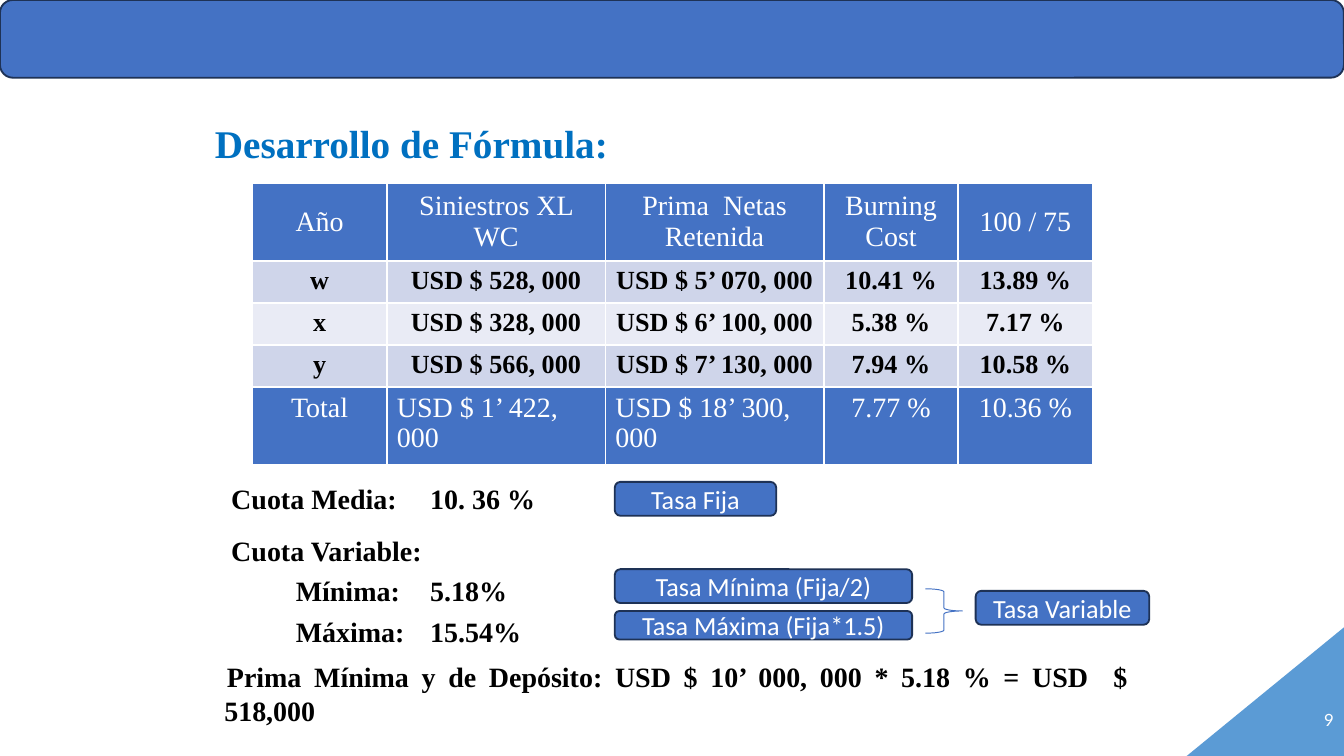
"""Build the slide that develops the reinsurance rate formula."""
from dataclasses import dataclass

from lxml import etree
from pptx import Presentation
from pptx import util as u
from pptx.dml.color import RGBColor
from pptx.enum import shapes, text
from pptx.oxml import ns


@dataclass(frozen=True)
class Theme:
    blue: str = "4472C4"
    outline: str = "1E3256"
    corner: str = "5B9BD5"
    heading: str = "0070C0"
    band_dark: str = "CFD5EA"
    band_light: str = "E9EBF5"
    white: str = "FFFFFF"
    black: str = "000000"
    serif: str = "Times New Roman"
    sans: str = "Calibri"
    number: str = "Lato"
    heading_size: float = 21
    text_size: float = 15
    small_size: float = 14
    number_size: float = 9


theme = Theme()


def write(frame, lines, face, size, color, bold=False, align=text.PP_ALIGN.CENTER,
          anchor=text.MSO_ANCHOR.MIDDLE, inset=(0.19, 0.1)):
    """Fill a text frame or table cell with evenly formatted paragraphs."""
    frame.word_wrap = True
    frame.vertical_anchor = anchor
    frame.margin_left = frame.margin_right = u.Cm(inset[0])
    frame.margin_top = frame.margin_bottom = u.Cm(inset[1])
    body = getattr(frame, "text_frame", frame)
    body.text = "\n".join(lines)
    for paragraph in body.paragraphs:
        paragraph.alignment = align
        paragraph.line_spacing = 1.0
        paragraph.space_before = u.Pt(0)
        font = paragraph.font
        font.name, font.size, font.bold = face, u.Pt(size), bold
        font.color.rgb = RGBColor.from_string(color)


def draw(kind, box, fill=None, line=None, width=1):
    """Add a flat preset shape at a box given in centimetres."""
    shape = slide.shapes.add_shape(kind, *map(u.Cm, box))
    shape.shadow.inherit = False
    for part, color in ((shape.fill, fill), (shape.line.fill, line)):
        if color:
            part.solid()
            part.fore_color.rgb = RGBColor.from_string(color)
        else:
            part.background()
    if line:
        shape.line.width = u.Pt(width)
    return shape


presentation = Presentation()
presentation.slide_width, presentation.slide_height = u.Cm(25.4), u.Cm(14.29)
slide = presentation.slides.add_slide(presentation.slide_layouts[1])
heading, rates = slide.placeholders

corner = draw(shapes.MSO_SHAPE.RIGHT_TRIANGLE, (22.43, 11.86, 2.97, 2.43), theme.corner)
corner._element.spPr.xfrm.set("flipH", "1")
page = slide.shapes.add_textbox(u.Cm(19.69), u.Cm(13.23), u.Cm(5.71), u.Cm(0.76))
write(page.text_frame, ["9"], theme.number, theme.number_size, theme.white,
      align=text.PP_ALIGN.RIGHT)
draw(shapes.MSO_SHAPE.ROUNDED_RECTANGLE, (0, 0, 25.4, 1.47), theme.blue, theme.outline)

heading.left, heading.top, heading.width, heading.height = map(u.Cm, (3.81, 2.2, 17.15, 1.01))
write(heading.text_frame, ["Desarrollo de Fórmula:"], theme.serif, theme.heading_size,
      theme.heading, True, text.PP_ALIGN.LEFT, inset=(0.25, 0))
heading.text_frame.auto_size = text.MSO_AUTO_SIZE.NONE

rows = [
    ["Año", "Siniestros XL WC", "Prima  Netas\nRetenida", "Burning Cost", "100 / 75"],
    ["w", "USD $ 528, 000", "USD $ 5’ 070, 000", "10.41 %", "13.89 %"],
    ["x", "USD $ 328, 000", "USD $ 6’ 100, 000", "5.38 %", "7.17 %"],
    ["y", "USD $ 566, 000", "USD $ 7’ 130, 000", "7.94 %", "10.58 %"],
    ["Total", "USD $ 1’ 422, 000", "USD $ 18’ 300, 000", "7.77 %", "10.36 %"],
]
heights = [1.45, 0.77, 0.77, 0.77, 1.45]
widths = [2.54, 4.13, 4.13, 2.54, 2.54]
fills = [theme.blue, theme.band_dark, theme.band_light, theme.band_dark, theme.blue]
costs = slide.shapes.add_table(len(rows), len(widths), u.Cm(4.77), u.Cm(3.46),
                               u.Cm(sum(widths)), u.Cm(sum(heights))).table
for column, width in zip(costs.columns, widths):
    column.width = u.Cm(width)
for r, values in enumerate(rows):
    costs.rows[r].height = u.Cm(heights[r])
    is_header, is_total = r == 0, r == len(rows) - 1
    is_year = not (is_header or is_total)
    for c, value in enumerate(values):
        cell = costs.cell(r, c)
        cell.fill.solid()
        cell.fill.fore_color.rgb = RGBColor.from_string(fills[r])
        write(cell, value.split("\n"), theme.serif,
              theme.small_size if is_year else theme.text_size,
              theme.black if is_year else theme.white, is_year,
              text.PP_ALIGN.LEFT if is_total and c in (1, 2) else text.PP_ALIGN.CENTER,
              text.MSO_ANCHOR.MIDDLE if is_header else text.MSO_ANCHOR.TOP)

rates.left, rates.top, rates.width, rates.height = map(u.Cm, (4.13, 9.0, 17.15, 3.35))
write(rates.text_frame,
      ["Cuota Media:\t10. 36 %", "Cuota Variable:", "\tMínima:\t5.18%", "\tMáxima:\t15.54%"],
      theme.serif, theme.text_size, theme.black, True, text.PP_ALIGN.LEFT,
      text.MSO_ANCHOR.TOP)
rates.text_frame.auto_size = text.MSO_AUTO_SIZE.NONE
for paragraph, gap in zip(rates.text_frame.paragraphs, (0, 10, 3.6, 3.6)):
    paragraph.space_before = u.Pt(gap)
    properties = paragraph._p.get_or_add_pPr()
    properties.set("marL", "0")
    properties.set("indent", str(u.Cm(0.05)))
    stops = etree.Element(ns.qn("a:tabLst"))
    indented = paragraph.text.startswith("\t")
    for position, kind in ([(0.98, "l")] if indented else []) + [(5.78, "ctr")]:
        etree.SubElement(stops, ns.qn("a:tab"), pos=str(u.Cm(position)), algn=kind)
    font_defaults = properties.find(ns.qn("a:defRPr"))
    font_defaults.addprevious(etree.Element(ns.qn("a:buNone")))
    font_defaults.addprevious(stops)

premium = slide.shapes.add_textbox(u.Cm(4.05), u.Cm(12.37), u.Cm(17.47), u.Cm(1.4))
write(premium.text_frame,
      ["Prima Mínima y de Depósito: USD $ 10’ 000, 000 * 5.18 % = USD  $ 518,000"],
      theme.serif, theme.text_size, theme.black, True, text.PP_ALIGN.JUSTIFY,
      text.MSO_ANCHOR.TOP)
premium.text_frame.paragraphs[0]._p.get_or_add_pPr().set("indent", str(u.Cm(0.05)))

for label, box in (
    ("Tasa Fija", (11.62, 9.11, 3.05, 0.64)),
    ("Tasa Mínima (Fija/2)", (11.62, 10.76, 5.62, 0.64)),
    ("Tasa Máxima (Fija*1.5)", (11.62, 11.55, 5.62, 0.54)),
    ("Tasa Variable", (18.44, 11.17, 3.28, 0.64)),
):
    tag = draw(shapes.MSO_SHAPE.ROUNDED_RECTANGLE, box, theme.blue, theme.outline)
    write(tag.text_frame, [label], theme.sans, theme.small_size, theme.white,
          inset=(0.25, 0.13))
draw(shapes.MSO_SHAPE.RIGHT_BRACE, (17.49, 11.13, 0.7, 0.84), line=theme.blue, width=0.5)

presentation.save("out.pptx")
